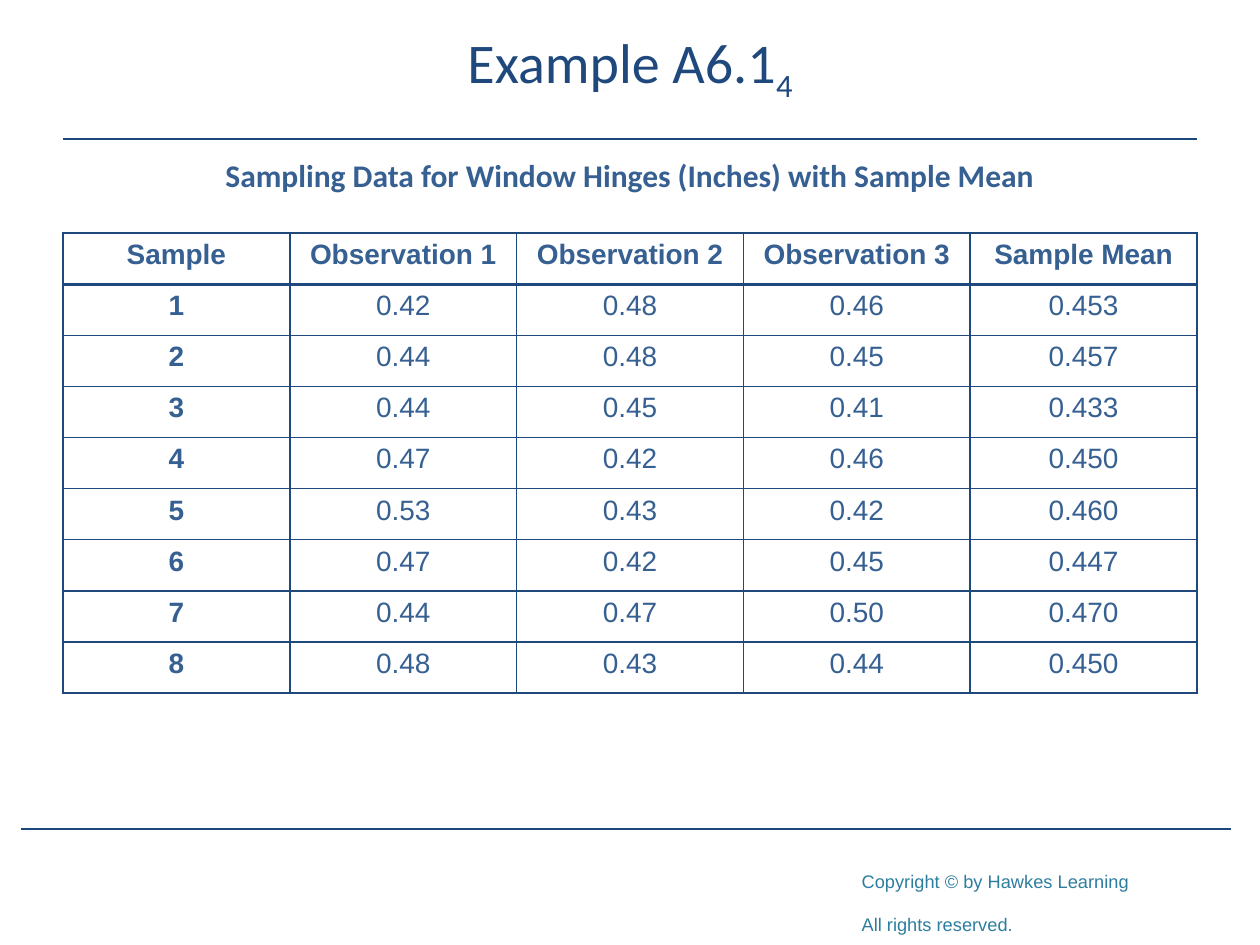
from lxml.etree import SubElement
from pptx import Presentation
from pptx.dml.color import RGBColor
from pptx.enum.shapes import MSO_CONNECTOR, MSO_SHAPE
from pptx.enum.text import MSO_ANCHOR, PP_ALIGN
from pptx.oxml.ns import qn
from pptx.util import Pt


def rgb(color):
    return RGBColor.from_string(color)


def style(p, text, size, name, color, bold=False, align=PP_ALIGN.CENTER):
    p.text = text
    p.alignment = align
    for r in p.runs:
        r.font.size = Pt(size)
        r.font.name = name
        r.font.bold = bold
        r.font.color.rgb = rgb(color)


prs = Presentation()
prs.slide_width, prs.slide_height = Pt(720), Pt(540)
s = prs.slides.add_slide(prs.slide_layouts[5])

sp = s.shapes.add_shape(MSO_SHAPE.RECTANGLE, Pt(485.3), Pt(460.8), Pt(221.8), Pt(77.8))
sp.shadow.inherit = False
sp.fill.solid()
sp.fill.fore_color.rgb = rgb("FFFFFF")
sp.line.fill.background()
tf = sp.text_frame
tf.word_wrap = True
tf.vertical_anchor = MSO_ANCHOR.TOP
tf.margin_top = Pt(24.3)
tf.text = "Copyright © by Hawkes Learning\nAll rights reserved."
for p in tf.paragraphs:
    style(p, p.text, 18, "Arial", "2D7D9F", align=PP_ALIGN.LEFT)
    p.runs[0].font._element.set("baseline", "-25000")

for x1, x2, y in [(36, 684, 79.2), (12.2, 703.4, 473.8)]:
    line = s.shapes.add_connector(MSO_CONNECTOR.STRAIGHT, Pt(x1), Pt(y), Pt(x2), Pt(y))
    line.line.color.rgb = rgb("1C477C")
    line.line.width = Pt(1.25)
    SubElement(line._element.spPr, qn("a:effectLst"))

title = s.shapes.title
title.left, title.top, title.width, title.height = Pt(36), Pt(8.6), Pt(648), Pt(72)
title.text_frame.vertical_anchor = MSO_ANCHOR.MIDDLE
p = title.text_frame.paragraphs[0]
style(p, "Example A6.1", 32, "Calibri", "1F497D")
p.line_spacing = Pt(30)
r = p.add_run()
r.text = "4"
r.font.size = Pt(32)
r.font.name = "Calibri"
r.font.color.rgb = rgb("1F497D")
r.font._element.set("baseline", "-25000")

caption = s.shapes.add_textbox(Pt(118.8), Pt(85.7), Pt(482.4), Pt(28.8))
caption.text_frame.word_wrap = True
style(caption.text_frame.paragraphs[0],
      "Sampling Data for Window Hinges (Inches) with Sample Mean",
      18, "Calibri", "376092", bold=True)

rows = [
    ("Sample", "Observation 1", "Observation 2", "Observation 3", "Sample Mean"),
    ("1", "0.42", "0.48", "0.46", "0.453"),
    ("2", "0.44", "0.48", "0.45", "0.457"),
    ("3", "0.44", "0.45", "0.41", "0.433"),
    ("4", "0.47", "0.42", "0.46", "0.450"),
    ("5", "0.53", "0.43", "0.42", "0.460"),
    ("6", "0.47", "0.42", "0.45", "0.447"),
    ("7", "0.44", "0.47", "0.50", "0.470"),
    ("8", "0.48", "0.43", "0.44", "0.450"),
]
table = s.shapes.add_table(len(rows), 5, Pt(36), Pt(133.2), Pt(648), Pt(262.8)).table
table.first_row = table.horz_banding = False
for i, row in enumerate(rows):
    table.rows[i].height = Pt(29.2)
    for j, text in enumerate(row):
        cell = table.cell(i, j)
        style(cell.text_frame.paragraphs[0], text, 16, "Arial", "366092",
              bold=i == 0 or j == 0)
        tcPr = cell._tc.get_or_add_tcPr()
        for side in ("lnL", "lnR", "lnT", "lnB"):
            thick = (i, side) in ((0, "lnB"), (1, "lnT"))
            ln = SubElement(tcPr, qn(f"a:{side}"), w=str(Pt(2 if thick else 1)))
            fill = SubElement(ln, qn("a:solidFill"))
            SubElement(fill, qn("a:srgbClr"), val="1F497D")
        cell.fill.background()

prs.save("out.pptx")
